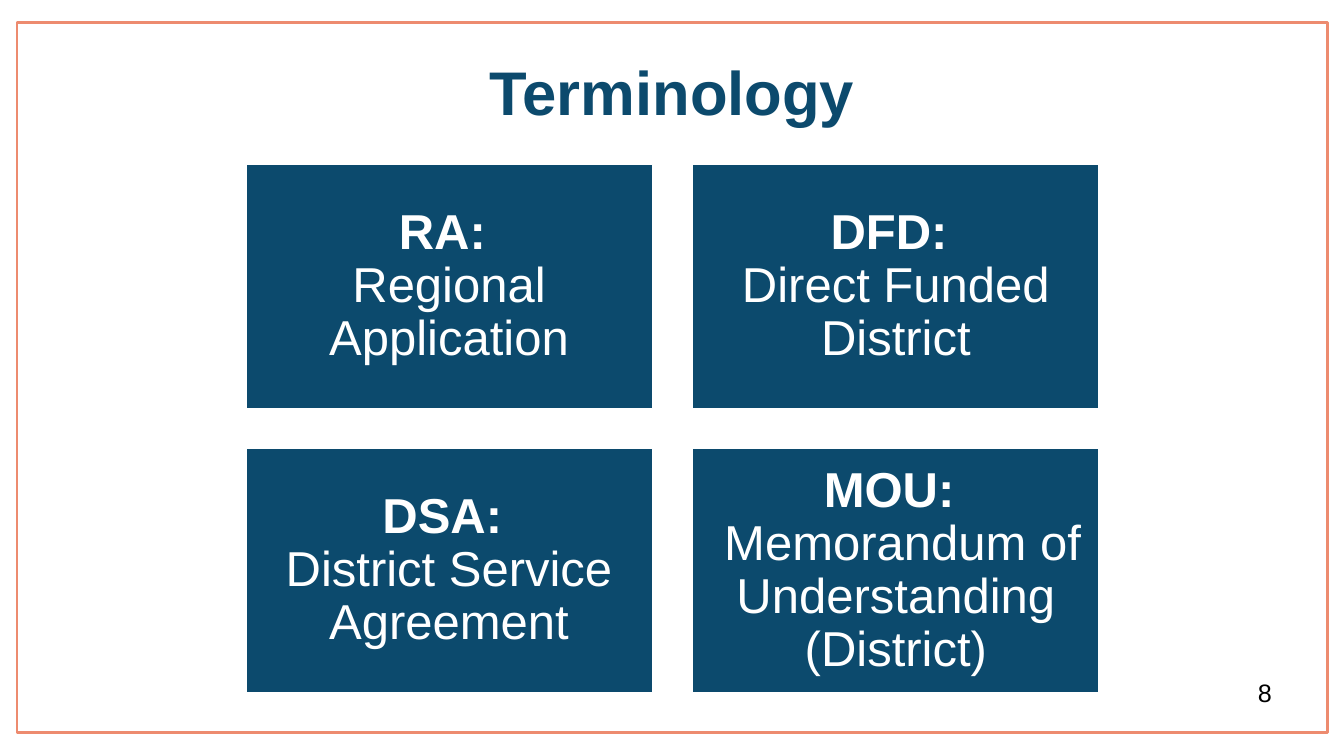
from pptx import Presentation
from pptx.dml.color import RGBColor
from pptx.enum.shapes import MSO_SHAPE
from pptx.enum.text import MSO_ANCHOR, PP_ALIGN
from pptx.util import Cm, Pt

COLORS = {"navy": "0C4A6D", "coral": "ED8B6F", "white": "FFFFFF", "black": "000000"}
TERMS = [
    ("RA: ", "Regional Application"),
    ("DFD: ", "Direct Funded District"),
    ("DSA: ", "District Service Agreement"),
    ("MOU: ", " Memorandum of Understanding (District)"),
]
CARD_W, CARD_H, GAP = 10.24, 6.15, 1.02
GRID_LEFT, GRID_TOP = 6.2, 4.14


class SlideBuilder:
    """Draws styled elements on the current slide."""

    font = "Arial"

    def __init__(self, slide):
        self.slide = slide

    def color(self, name):
        return RGBColor.from_string(COLORS[name])

    def rect(self, x, y, w, h, line, weight, fill=None):
        sp = self.slide.shapes.add_shape(MSO_SHAPE.RECTANGLE, Cm(x), Cm(y), Cm(w), Cm(h))
        sp.shadow.inherit = False
        if fill:
            sp.fill.solid()
            sp.fill.fore_color.rgb = self.color(fill)
        else:
            sp.fill.background()
        sp.line.color.rgb = self.color(line)
        sp.line.width = Pt(weight)
        return sp

    def run(self, p, text, size, color, bold=False):
        r = p.add_run()
        r.text = text
        r.font.name = self.font
        r.font.size = Pt(size)
        r.font.bold = bold
        r.font.color.rgb = self.color(color)

    def textbox(self, x, y, w, h):
        tf = self.slide.shapes.add_textbox(Cm(x), Cm(y), Cm(w), Cm(h)).text_frame
        tf.word_wrap = True
        return tf

    def center(self, p):
        p.alignment = PP_ALIGN.CENTER
        p.line_spacing = 0.9

    def title(self, x, y, w, h, text):
        tf = self.textbox(x, y, w, h)
        tf.vertical_anchor = MSO_ANCHOR.MIDDLE
        p = tf.paragraphs[0]
        self.center(p)
        self.run(p, text, 44, "navy", True)

    def card(self, x, y, term, meaning):
        tf = self.rect(x, y, CARD_W, CARD_H, "white", 1, "navy").text_frame
        tf.word_wrap = True
        tf.vertical_anchor = MSO_ANCHOR.MIDDLE
        tf.margin_left = tf.margin_right = tf.margin_top = tf.margin_bottom = Cm(0.38)
        for p, text, bold in (
            (tf.paragraphs[0], term, True),
            (tf.add_paragraph(), meaning, False),
        ):
            self.center(p)
            self.run(p, text, 35, "white", bold)

    def number(self, x, y, w, h, text):
        self.run(self.textbox(x, y, w, h).paragraphs[0], text, 18, "black")


def main():
    prs = Presentation()
    prs.slide_width, prs.slide_height = Cm(33.87), Cm(19.05)
    s = SlideBuilder(prs.slides.add_slide(prs.slide_layouts[6]))
    s.rect(0.43, 0.56, 33.02, 17.91, "coral", 2)
    s.title(0.43, 0.56, 33.02, 3.68, "Terminology")
    for i, (term, meaning) in enumerate(TERMS):
        row, col = divmod(i, 2)
        s.card(GRID_LEFT + col * (CARD_W + GAP), GRID_TOP + row * (CARD_H + GAP), term, meaning)
    s.number(31.45, 16.94, 1.9, 1.27, "8")
    prs.save("out.pptx")


if __name__ == "__main__":
    main()
